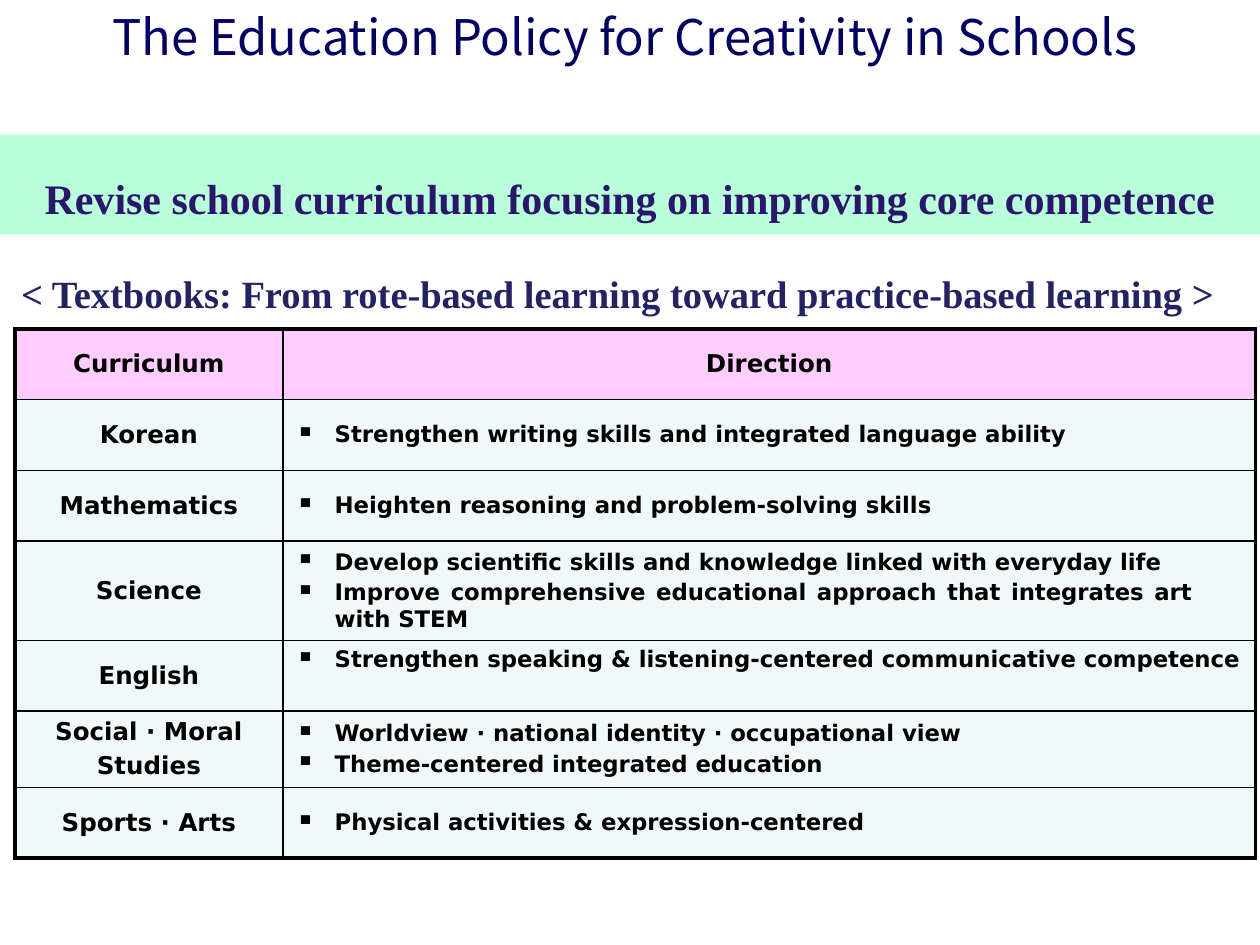
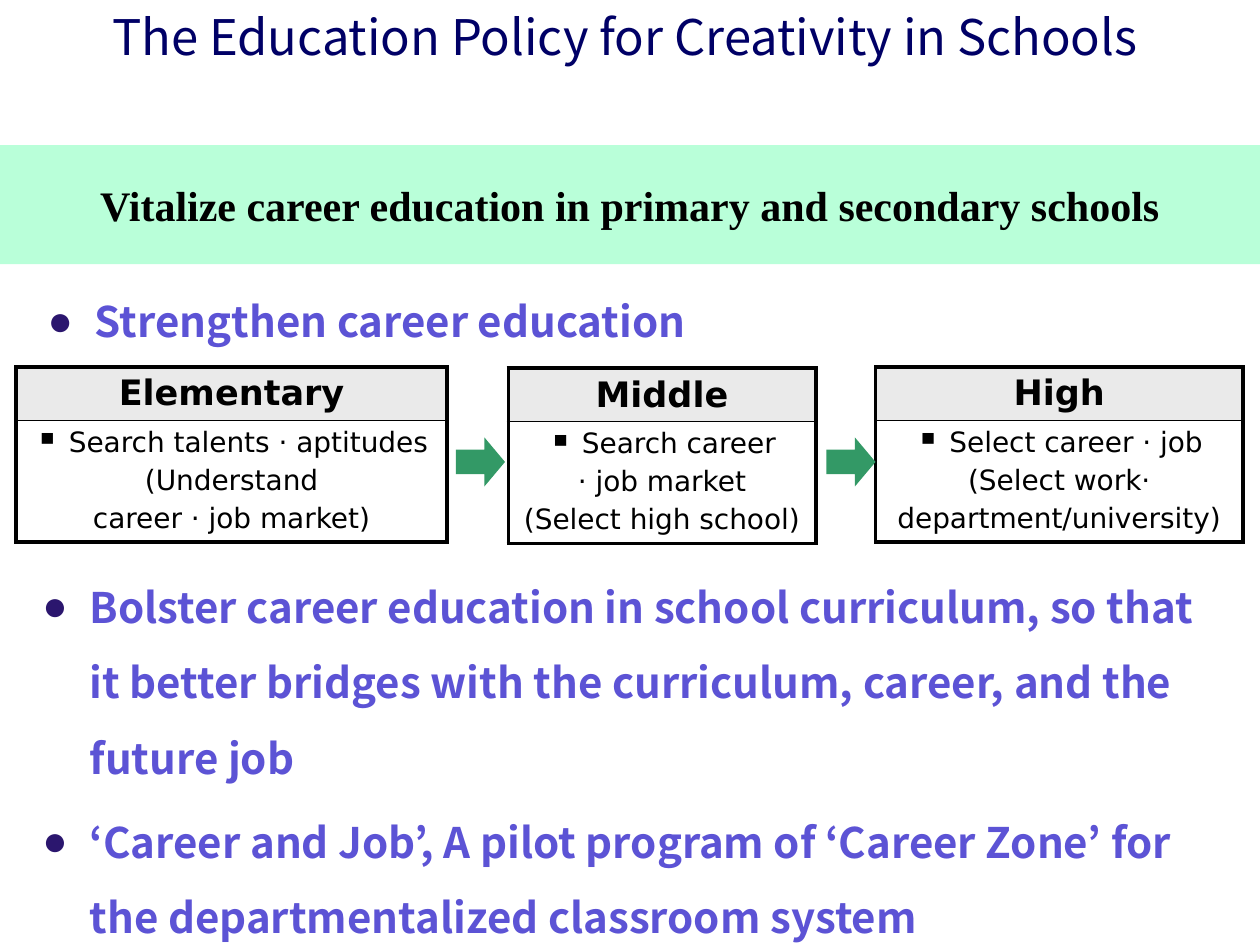
"""Build two slides on education policy for creativity in schools."""
from lxml.etree import SubElement as Sub
from pptx import Presentation
from pptx.dml.color import RGBColor as Rgb
from pptx.enum.shapes import MSO_SHAPE as Shape
from pptx.enum.text import MSO_ANCHOR as Anchor, MSO_AUTO_SIZE as AutoSize, PP_ALIGN as Align
from pptx.oxml.ns import qn
from pptx.util import Pt

COLORS = {
    "title": "000066", "band": "B9FFD9", "purple": "2B166E", "navy": "222267",
    "list": "5C53D5", "black": "000000", "header": "FFCCFF", "cell": "F0F8F9",
    "stage": "EAEAEA", "arrow": "339966",
}
SANS, SERIF, TABLE_FONT = "Noto Sans CJK KR", "Times New Roman", "DejaVu Sans"
TITLE = "The Education Policy for Creativity in Schools"
THICK, THIN = 2.25, 1


def write(frame, lines, size, font, color="black", bold=True, align=Align.CENTER,
          anchor=Anchor.TOP, spacing=1, bullet=None, bullet_color="black",
          bullet_size=100, bulleted=9, indent=0):
    frame.vertical_anchor = anchor
    for index, line in enumerate(lines):
        para = frame.paragraphs[0] if index == 0 else frame.add_paragraph()
        para.alignment = align
        para.line_spacing = spacing
        para.space_before = Pt(round(0.2 * size, 1) if index else 0)
        if bullet and index < bulleted:
            props = para._p.get_or_add_pPr()
            props.set("marL", str(Pt(indent)))
            props.set("indent", str(-Pt(indent)))
            Sub(Sub(props, qn("a:buClr")), qn("a:srgbClr"), val=COLORS[bullet_color])
            Sub(props, qn("a:buSzPct"), val=str(bullet_size * 1000))
            Sub(props, qn("a:buChar"), char=bullet)
        span = para.add_run()
        span.text = line
        span.font.size = Pt(size)
        span.font.name = font
        span.font.bold = bold
        span.font.color.rgb = Rgb.from_string(COLORS[color])


def dress(table, fills):
    table.first_row = table.horz_banding = False
    last_row, last_column = len(table.rows) - 1, len(table.columns) - 1
    for r, row in enumerate(table.rows):
        for c, cell in enumerate(row.cells):
            outer = {"L": c == 0, "R": c == last_column, "T": r == 0, "B": r == last_row}
            props = cell._tc.get_or_add_tcPr()
            for side, is_outer in outer.items():
                width = Pt(THICK if is_outer else THIN)
                border = Sub(props, qn("a:ln" + side), w=str(width))
                Sub(Sub(border, qn("a:solidFill")), qn("a:srgbClr"), val=COLORS["black"])
            fill = fills[min(r, 1)]
            if fill:
                cell.fill.solid()
                cell.fill.fore_color.rgb = Rgb.from_string(COLORS[fill])
            else:
                cell.fill.background()


deck = Presentation()
deck.slide_width, deck.slide_height = Pt(720), Pt(540)

bands = [
    (5, 77, 57, "Revise school curriculum focusing on improving core competence", "purple", 1.5),
    (3, 83, 68, "Vitalize career education in primary and secondary schools", "black", 1),
]
pages = []
for layout, top, height, heading, color, spacing in bands:
    page = deck.slides.add_slide(deck.slide_layouts[layout])
    pages.append(page)
    title = page.shapes.title
    title.left, title.top, title.width, title.height = Pt(-3), Pt(0), Pt(720), Pt(55)
    title.text_frame.auto_size = AutoSize.NONE
    write(title.text_frame, [TITLE], 28, SANS, color="title", bold=False)
    band = page.shapes.add_shape(Shape.RECTANGLE, Pt(0), Pt(top), Pt(720), Pt(height))
    band.shadow.inherit = False
    band.fill.solid()
    band.fill.fore_color.rgb = Rgb.from_string(COLORS["band"])
    band.line.fill.background()
    write(band.text_frame, [heading], 24, SERIF, color=color, anchor=Anchor.MIDDLE,
          spacing=spacing)
curriculum_page, career_page = pages

subtitle = curriculum_page.shapes.add_textbox(Pt(5), Pt(151), Pt(704), Pt(34))
subtitle.text_frame.word_wrap = False
write(subtitle.text_frame,
      ["< Textbooks: From rote-based learning toward practice-based learning >"],
      22, SERIF, color="navy", align=Align.LEFT)

subjects = [
    (["Curriculum"], ["Direction"], 40.4),
    (["Korean"], ["Strengthen writing skills and integrated language ability"], 40.4),
    (["Mathematics"], ["Heighten reasoning and problem-solving skills"], 40.4),
    (["Science"],
     ["Develop scientific skills and knowledge linked with everyday life",
      "Improve comprehensive educational approach that integrates art with STEM"], 54.7),
    (["English"],
     ["Strengthen speaking & listening-centered communicative competence"], 40.4),
    (["Social · Moral", "Studies"],
     ["Worldview · national identity · occupational view",
      "Theme-centered integrated education"], 42.8),
    (["Sports · Arts"], ["Physical activities & expression-centered"], 40.4),
]
table = curriculum_page.shapes.add_table(
    len(subjects), 2, Pt(8.6), Pt(188), Pt(709), Pt(299.5)).table
table.columns[0].width, table.columns[1].width = Pt(153), Pt(556)
dress(table, ["header", "cell"])
for r, (subject, directions, height) in enumerate(subjects):
    table.rows[r].height = Pt(height)
    write(table.cell(r, 0).text_frame, subject, 14, TABLE_FONT)
    if r == 0:
        write(table.cell(r, 1).text_frame, directions, 14, TABLE_FONT)
    else:
        write(table.cell(r, 1).text_frame, directions, 13, TABLE_FONT, align=Align.JUSTIFY,
              bullet="▪", bullet_size=120, indent=22.5)
    for cell in table.rows[r].cells:
        cell.vertical_anchor = Anchor.MIDDLE
table.cell(3, 1).margin_right = Pt(37)
table.cell(4, 1).vertical_anchor = Anchor.TOP

lists = [
    (20, 151, 642, 45, ["Strengthen career education"]),
    (17, 314, 681, 226,
     ["Bolster career education in school curriculum, so that it better bridges with "
      "the curriculum, career, and the future job",
      "‘Career and Job’, A pilot program of ‘Career Zone’ for the departmentalized "
      "classroom system"]),
]
bodies = list(career_page.placeholders)[1:]
for body, (left, top, width, height, items) in zip(bodies, lists):
    body.left, body.top, body.width, body.height = Pt(left), Pt(top), Pt(width), Pt(height)
    body.text_frame.auto_size = AutoSize.NONE
    write(body.text_frame, items, 24, SANS, color="list", align=Align.LEFT, spacing=1.5,
          bullet="●", bullet_color="purple", indent=27)

stages = [
    (9.2, 209.7, 246.3, "Elementary",
     [" Search talents · aptitudes", "(Understand", "career · job market)"]),
    (290.4, 210.4, 175.8, "Middle",
     [" Search career", "· job market", "(Select high school)"]),
    (500.4, 209.7, 209.8, "High",
     [" Select career · job", "(Select work·", "department/university)"]),
]
for left, top, width, stage, tasks in stages:
    table = career_page.shapes.add_table(2, 1, Pt(left), Pt(top), Pt(width), Pt(100)).table
    table.rows[0].height, table.rows[1].height = Pt(30.4), Pt(69.6)
    dress(table, ["stage", None])
    write(table.cell(0, 0).text_frame, [stage], 20, TABLE_FONT)
    write(table.cell(1, 0).text_frame, tasks, 16, TABLE_FONT, bold=False,
          bullet="▪", bullet_size=120, bulleted=1)

for left in (260.6, 472.3):
    arrow = career_page.shapes.add_shape(Shape.RIGHT_ARROW, Pt(left), Pt(250), Pt(28), Pt(28))
    arrow.adjustments[0], arrow.adjustments[1] = 0.5, 0.42
    arrow.shadow.inherit = False
    arrow.fill.solid()
    arrow.fill.fore_color.rgb = Rgb.from_string(COLORS["arrow"])
    arrow.line.fill.background()

deck.save("out.pptx")
